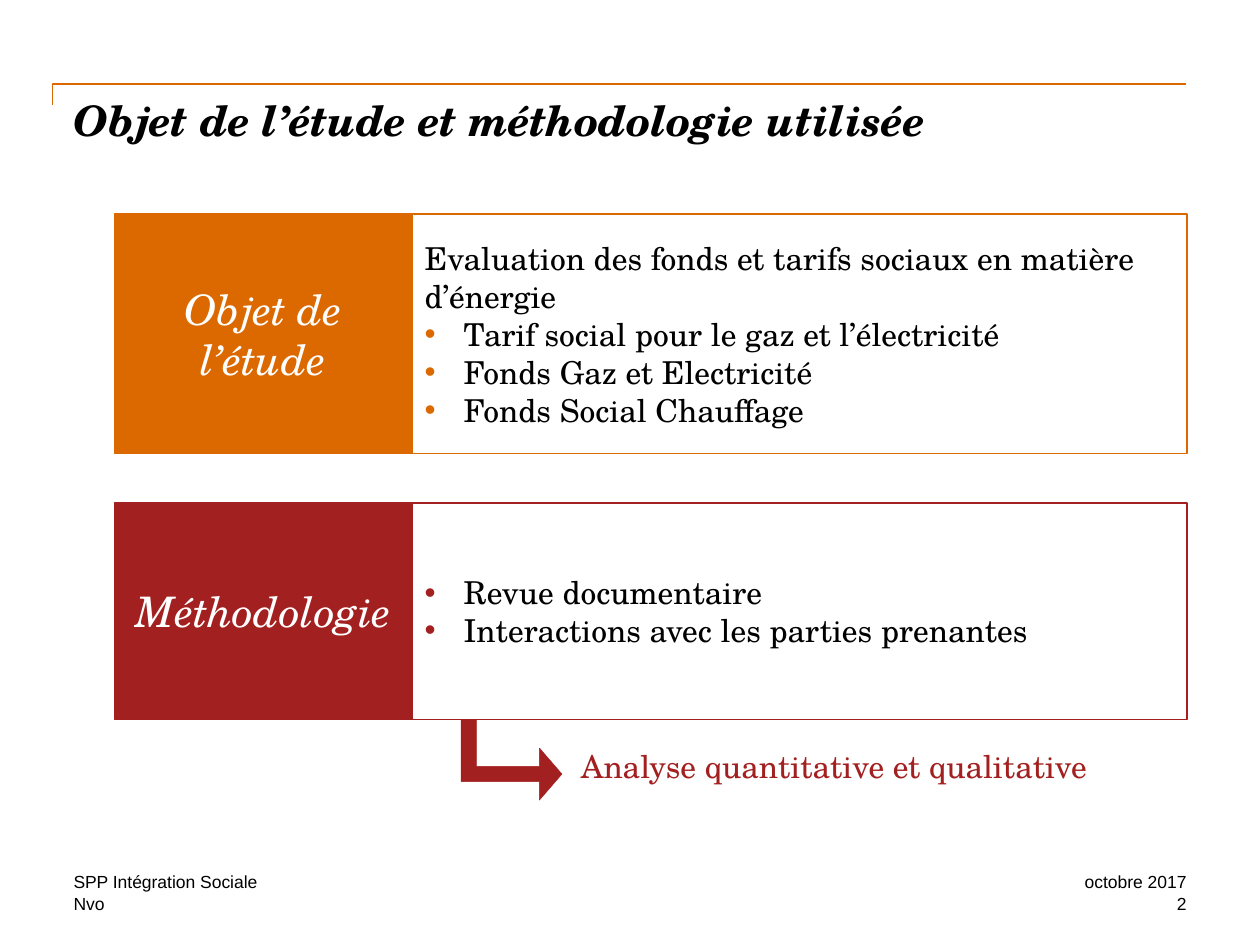
from dataclasses import dataclass

from lxml.etree import SubElement
from pptx import Presentation
from pptx.dml.color import RGBColor
from pptx.enum.shapes import MSO_CONNECTOR as Link, MSO_SHAPE as Preset
from pptx.enum.text import MSO_ANCHOR as Anchor, MSO_AUTO_SIZE as Fit, PP_ALIGN as Align
from pptx.oxml.ns import qn
from pptx.util import Inches, Pt


@dataclass(frozen=True)
class Theme:
    """Colours, fonts and type sizes of the deck."""
    orange: str = "DC6900"
    red: str = "A32020"
    black: str = "000000"
    white: str = "FFFFFF"
    serif: str = "TeX Gyre Schola"
    sans: str = "Arial"
    heading: int = 24
    body: int = 18
    footer: int = 10
    hanging: float = 0.31


class StudySlide:
    """Draws the study slide on a grid of 120 columns by 90 rows."""

    def __init__(self, deck, theme):
        """Open a slide with a title and two lists."""
        self.theme = theme
        self.column = deck.slide_width / 120
        self.row = deck.slide_height / 90
        self.slide = deck.slides.add_slide(deck.slide_layouts[3])
        self.shapes = self.slide.shapes
        self.lists = [holder for holder in self.slide.placeholders
                      if holder.placeholder_format.idx > 0]

    def box(self, left, top, width, height):
        """Turn grid units into slide lengths."""
        return (round(left * self.column), round(top * self.row),
                round(width * self.column), round(height * self.row))

    def place(self, holder, area):
        """Move a placeholder to a grid area."""
        holder.left, holder.top, holder.width, holder.height = self.box(*area)

    def paint(self, shape, line, fill=None, weight=1):
        """Set the outline and the fill of a shape."""
        shape.line.color.rgb = RGBColor.from_string(line)
        shape.line.width = Pt(weight)
        if fill:
            shape.fill.solid()
            shape.fill.fore_color.rgb = RGBColor.from_string(fill)
        else:
            shape.fill.background()

    def set_text(self, shape, text, size, color, face=None, bold=False, italic=False,
                 align=Align.LEFT, anchor=Anchor.TOP, inset=0.0):
        """Fill a shape with uniformly styled text."""
        frame = shape.text_frame
        frame.text = text
        frame.word_wrap, frame.auto_size, frame.vertical_anchor = True, Fit.NONE, anchor
        frame.margin_left = frame.margin_right = Inches(inset)
        frame.margin_top = frame.margin_bottom = Inches(inset / 2)
        for paragraph in frame.paragraphs:
            paragraph.alignment = align
            paragraph.space_before = Pt(0)
            for run in paragraph.runs:
                font = run.font
                font.name, font.size = face or self.theme.serif, Pt(size)
                font.bold, font.italic = bold, italic
                font.color.rgb = RGBColor.from_string(color)

    def bullet(self, paragraph, color):
        """Give a paragraph a hanging bullet, or none without a colour."""
        props = paragraph._p.get_or_add_pPr()
        hanging = Inches(self.theme.hanging) if color else 0
        props.set("marL", str(int(hanging)))
        props.set("indent", str(-int(hanging)))
        if color:
            SubElement(SubElement(props, qn("a:buClr")), qn("a:srgbClr"), val=color)
            SubElement(props, qn("a:buFont"), typeface=self.theme.sans)
            SubElement(props, qn("a:buChar"), char="•")
        else:
            SubElement(props, qn("a:buNone"))

    def title(self, text, area):
        """Set the slide title."""
        self.place(self.shapes.title, area)
        self.set_text(self.shapes.title, text, self.theme.heading, self.theme.black,
                      bold=True, italic=True)

    def corner_rule(self, left, top, right, bottom):
        """Draw the rule that turns down at its left end."""
        rule = self.shapes.add_connector(Link.ELBOW, *self.box(right, top, left, bottom))
        rule.line.color.rgb = RGBColor.from_string(self.theme.orange)
        rule.line.width = Pt(1)
        props = rule._element.spPr
        props.find(qn("a:prstGeom")).set("prst", "bentConnector2")
        SubElement(props, qn("a:effectLst"))

    def panel(self, label, intro, points, color, top, height):
        """Draw a coloured label beside its outlined list."""
        left, label_width, list_width = 10.92, 28.32, 73.8
        outline = self.lists.pop(0)
        self.place(outline, (left + label_width, top, list_width, height))
        self.paint(outline, color)
        self.set_text(outline, "\n".join(intro + points), self.theme.body, self.theme.black,
                      anchor=Anchor.MIDDLE, inset=0.1)
        for index, paragraph in enumerate(outline.text_frame.paragraphs):
            self.bullet(paragraph, color if index >= len(intro) else None)
        tile = self.shapes.add_shape(Preset.RECTANGLE, *self.box(left, top, label_width, height))
        tile.shadow.inherit = False
        self.paint(tile, color, color)
        self.set_text(tile, label, self.theme.heading, self.theme.white, italic=True,
                      align=Align.CENTER, anchor=Anchor.MIDDLE, inset=0.1)

    def turn_arrow(self, area, color):
        """Draw an arrow that goes down and then right."""
        arrow = self.shapes.add_shape(Preset.BENT_UP_ARROW, *self.box(*area))
        arrow.rotation = 90
        arrow.shadow.inherit = False
        for index, share in enumerate((0.188, 0.322, 0.279)):
            arrow.adjustments[index] = share
        self.paint(arrow, color, color, 0.25)

    def note(self, text, area, size, color, **style):
        """Add a line of free text."""
        self.set_text(self.shapes.add_textbox(*self.box(*area)), text, size, color, **style)

    def footer(self, text, left, top, width, align=Align.LEFT):
        """Add one footer line."""
        self.note(text, (left, top, width, 2), self.theme.footer, self.theme.black,
                  face=self.theme.sans, align=align)


def main():
    """Build the slide and save it."""
    deck = Presentation()
    deck.slide_width, deck.slide_height = Inches(10), Inches(7.5)
    theme = Theme()
    study = StudySlide(deck, theme)
    study.corner_rule(5, 8, 113, 10)
    study.title("Objet de l’étude et méthodologie utilisée", (7, 9, 106, 12))
    study.panel("Objet de l’étude",
                ["Evaluation des fonds et tarifs sociaux en matière d’énergie"],
                ["Tarif social pour le gaz et l’électricité", "Fonds Gaz et Electricité",
                 "Fonds Social Chauffage"], theme.orange, 20.4, 22.8)
    study.panel("Méthodologie", [],
                ["Revue documentaire", "Interactions avec les parties prenantes"],
                theme.red, 47.88, 20.64)
    study.note("Analyse quantitative et qualitative", (55.32, 71.16, 52.08, 2.52),
               theme.body, theme.red)
    study.turn_arrow((44.88, 67.56, 7.68, 9.6), theme.red)
    study.footer("SPP Intégration Sociale", 7, 83, 69)
    study.footer("Nvo", 7, 85, 34)
    study.footer("octobre 2017", 93, 83, 20, Align.RIGHT)
    study.footer("2", 93, 85, 20, Align.RIGHT)
    deck.save("out.pptx")


if __name__ == "__main__":
    main()
